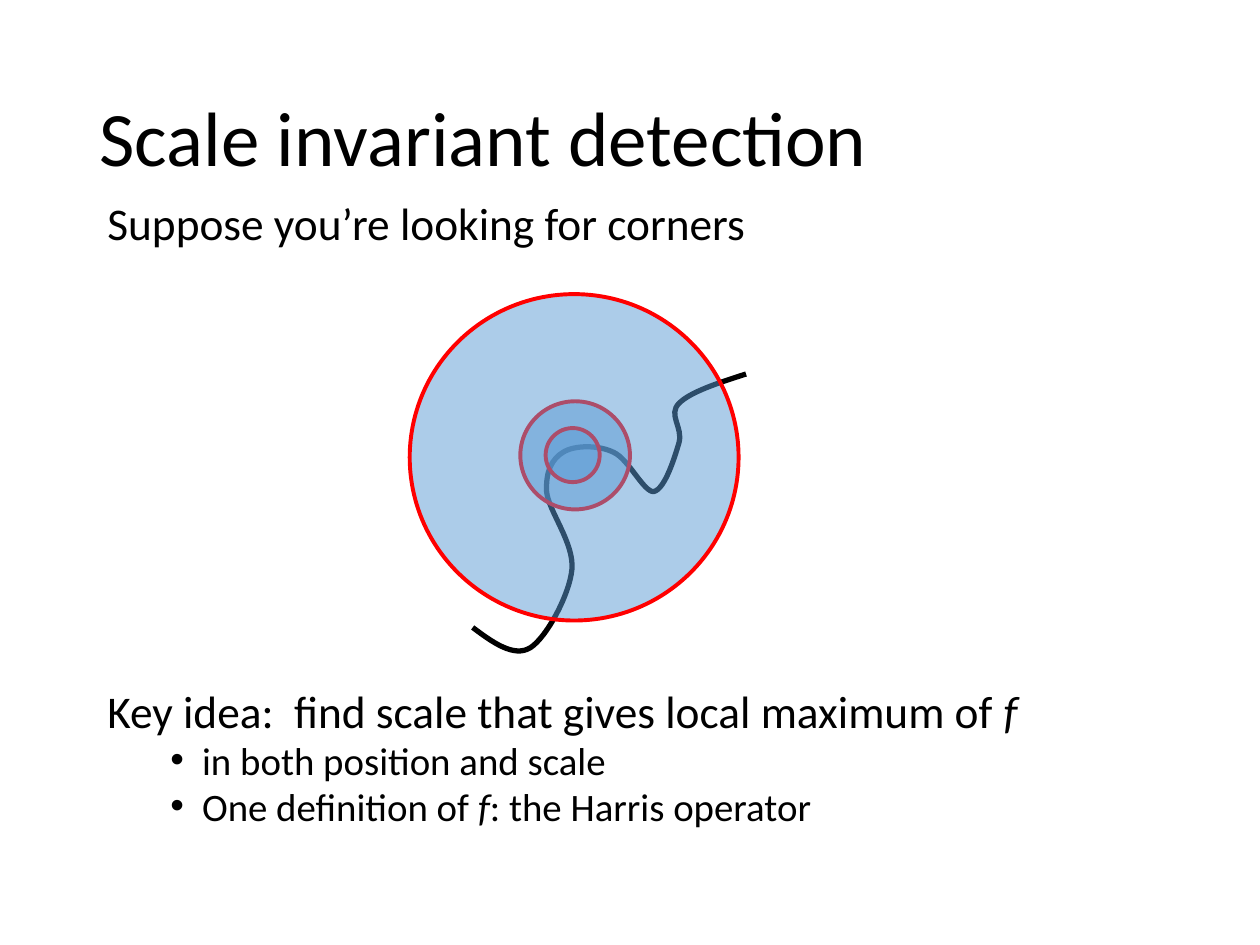
from dataclasses import dataclass

from lxml.etree import SubElement
from pptx import Presentation
from pptx.dml.color import RGBColor
from pptx.enum.shapes import MSO_SHAPE as Kind
from pptx.enum.text import MSO_ANCHOR as Anchor, MSO_AUTO_SIZE as Fit, PP_ALIGN as Align
from pptx.oxml.ns import qn
from pptx.util import Cm, Pt

BLACK = RGBColor(0x00, 0x00, 0x00)
RED = RGBColor(0xFF, 0x00, 0x00)
BLUE = RGBColor(0x5B, 0x9B, 0xD5)
FACE = "Calibri"


@dataclass
class Ring:
    left: float
    top: float
    width: float
    height: float


@dataclass
class Line:
    words: list[str]
    size: float
    before: float
    level: int = 0


RINGS = [
    Ring(10.49, 8.09, 2.21, 2.18),
    Ring(11, 8.63, 1.09, 1.09),
    Ring(8.26, 5.93, 6.63, 6.58),
]

CURVE = [
    (9.53, 12.65),
    (9.93, 12.95), (10.36, 13.26), (10.69, 13.06),
    (11.02, 12.85), (11.48, 11.99), (11.53, 11.48),
    (11.58, 10.95), (11.05, 10.29), (11.02, 9.91),
    (11, 9.5), (11.13, 9.25), (11.35, 9.12),
    (11.58, 8.97), (12.07, 8.97), (12.37, 9.12),
    (12.67, 9.25), (12.98, 9.93), (13.18, 9.91),
    (13.41, 9.86), (13.61, 9.19), (13.69, 8.92),
    (13.77, 8.61), (13.46, 8.36), (13.69, 8.13),
    (13.92, 7.9), (14.48, 7.72), (15.04, 7.54),
]

# In each line, every second run of words is italic.
LINES = [
    Line(["Suppose you’re looking for corners"], 25.9, 0),
    Line(["Key idea:  find scale that gives local maximum of ", "f"], 25.9, 254),
    Line(["in both position and scale"], 22.2, 5, 1),
    Line(["One definition of ", "f", ": the Harris operator"], 22.2, 5, 1),
]


def place(shape, left: float, top: float, width: float, height: float) -> None:
    shape.left, shape.top = Cm(left), Cm(top)
    shape.width, shape.height = Cm(width), Cm(height)


def style(run, size: float, slant: bool = False) -> None:
    font = run.font
    font.name, font.size, font.italic = FACE, Pt(size), slant
    font.color.rgb = BLACK


def draw_title(shape) -> None:
    place(shape, 1.75, 1.02, 21.89, 3.68)
    frame = shape.text_frame
    frame.text = "Scale invariant detection"
    frame.auto_size = Fit.NONE
    frame.vertical_anchor = Anchor.MIDDLE
    para = frame.paragraphs[0]
    para.alignment = Align.LEFT
    para.line_spacing = 0.9
    style(para.runs[0], 44)


def draw_line(para, line: Line) -> None:
    para.level = line.level
    props = para._p.get_or_add_pPr()
    props.set("marL", str(Cm(1.91 if line.level else 0.64)))
    props.set("indent", str(Cm(-0.64)))
    if line.level:
        SubElement(props, qn("a:buFont"), typeface="Arial")
        SubElement(props, qn("a:buChar"), char="•")
    else:
        SubElement(props, qn("a:buNone"))
    para.line_spacing = 0.8
    para.space_before = Pt(line.before)
    for pos, text in enumerate(line.words):
        run = para.add_run()
        run.text = text
        style(run, line.size, pos % 2 == 1)


def draw_body(shape) -> None:
    place(shape, 1.91, 4.01, 21.59, 13.97)
    frame = shape.text_frame
    frame.auto_size = Fit.NONE
    for pos, line in enumerate(LINES):
        draw_line(frame.add_paragraph() if pos else frame.paragraphs[0], line)


def draw_curve(shapes) -> None:
    start, *rest = [(Cm(x), Cm(y)) for x, y in CURVE]
    pen = shapes.build_freeform(*start)
    pen.add_line_segments(rest, close=False)
    curve = pen.convert_to_shape()
    curve.shadow.inherit = False
    curve.fill.background()
    curve.line.color.rgb = BLACK
    curve.line.width = Pt(3)
    track = next(curve._element.iter(qn("a:path")))
    steps = track.findall(qn("a:lnTo"))
    for pos in range(0, len(steps), 3):
        bend = SubElement(track, qn("a:cubicBezTo"))
        for step in steps[pos:pos + 3]:
            bend.append(step[0])
            track.remove(step)


def draw_ring(shapes, ring: Ring) -> None:
    group = shapes.add_group_shape()
    box = Cm(ring.left), Cm(ring.top), Cm(ring.width), Cm(ring.height)
    disc, rim = [group.shapes.add_shape(Kind.OVAL, *box) for _ in range(2)]
    disc.fill.solid()
    disc.fill.fore_color.rgb = BLUE
    tint = disc._element.spPr.find(qn("a:solidFill"))[0]
    SubElement(tint, qn("a:alpha"), val="50000")
    rim.fill.background()
    for oval, color, width in ((disc, BLACK, 0.75), (rim, RED, 2.25)):
        oval.shadow.inherit = False
        oval.line.color.rgb = color
        oval.line.width = Pt(width)


def main() -> None:
    deck = Presentation()
    deck.slide_width, deck.slide_height = Cm(25.4), Cm(19.05)
    slide = deck.slides.add_slide(deck.slide_layouts[1])
    draw_curve(slide.shapes)
    draw_title(slide.shapes.title)
    for ring in RINGS:
        draw_ring(slide.shapes, ring)
    draw_body(slide.placeholders[1])
    deck.save("out.pptx")


if __name__ == "__main__":
    main()
